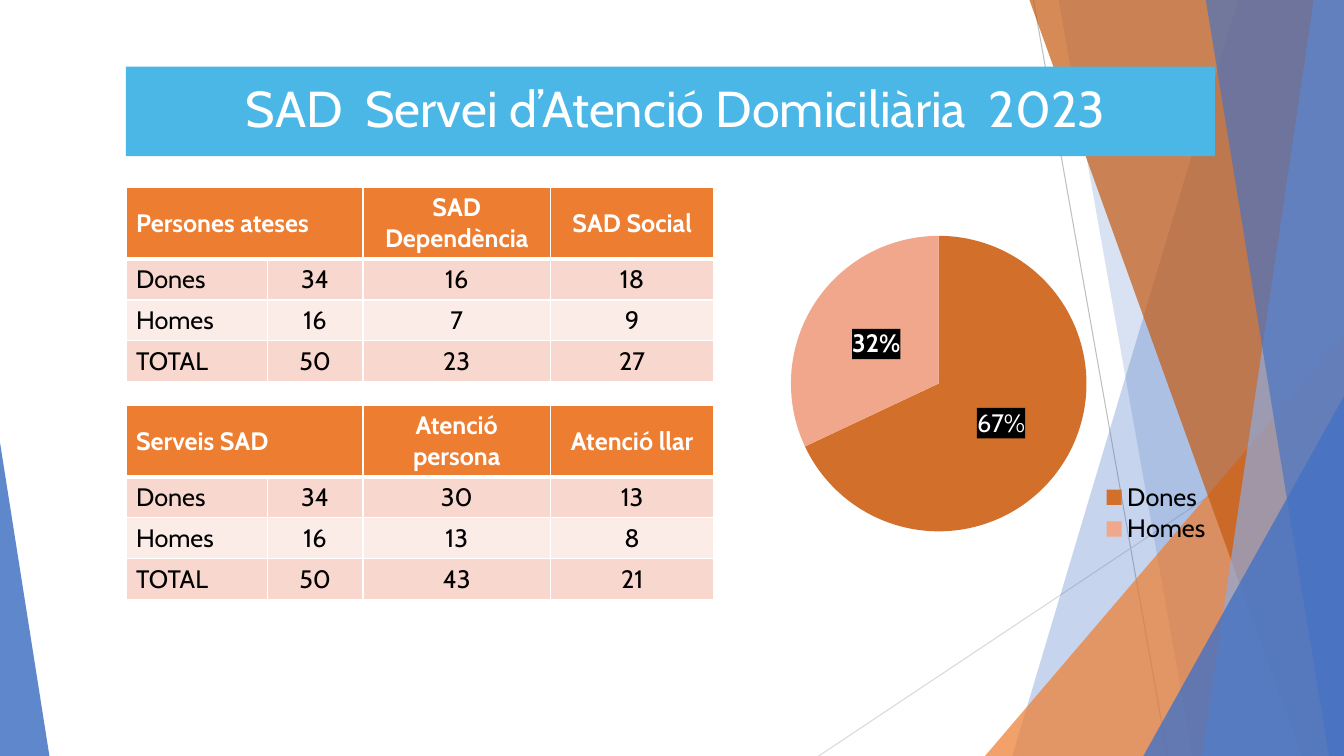
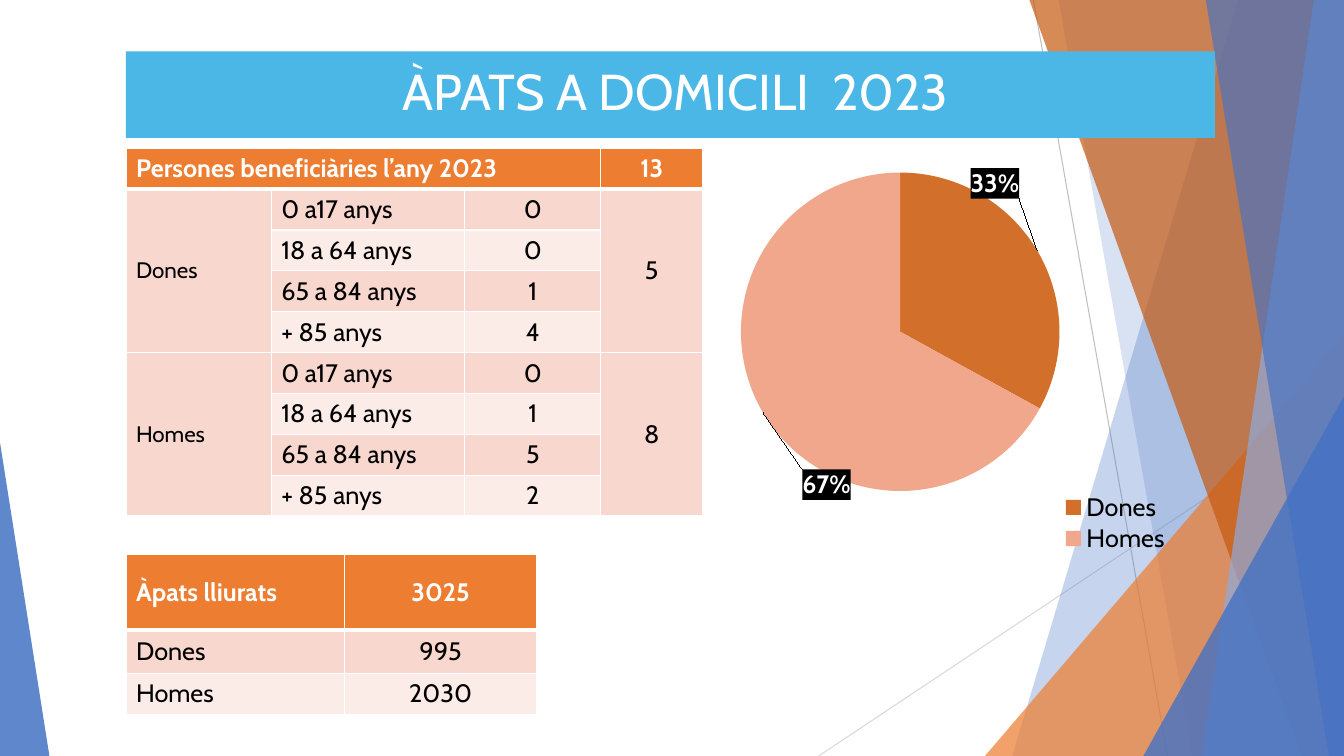
from lxml.etree import SubElement
from pptx import Presentation
from pptx.chart.data import CategoryChartData
from pptx.dml.color import RGBColor
from pptx.enum.chart import XL_CHART_TYPE, XL_LABEL_POSITION, XL_LEGEND_POSITION
from pptx.enum.shapes import MSO_CONNECTOR, MSO_SHAPE
from pptx.enum.text import MSO_ANCHOR, PP_ALIGN
from pptx.oxml import parse_xml
from pptx.oxml.ns import nsdecls, qn
from pptx.util import Inches, Pt

# Grid: one column or row is one inch
COLUMNS, ROWS = 13.33, 7.5
LEFT, BAND_WIDTH = 1.25, 10.8
FONT = "Cabin"
COLORS = {
    "band": "4BB7E7", "header": "ED7D31", "odd": "F8D7CE", "even": "FCECE8",
    "women": "D26F2B", "men": "F1A78B", "blue": "4472C4", "light_blue": "8FAADC",
    "orange": "ED7D31", "brown": "C55A11", "gray": "BFBFBF", "light_gray": "D9D9D9",
    "white": "FFFFFF", "black": "000000",
}


def color(name):
    return RGBColor.from_string(COLORS[name])


def grid(*lengths):
    return [Inches(length) for length in lengths]


def set_font(font, size, color_name, bold=False):
    font.name, font.size, font.bold = FONT, Pt(size), bold
    font.color.rgb = color(color_name)


def paint(shape, color_name, opacity=100):
    shape.shadow.inherit = False
    shape.line.fill.background()
    shape.fill.solid()
    shape.fill.fore_color.rgb = color(color_name)
    if opacity < 100:
        solid = shape.element.spPr.find(qn("a:solidFill"))
        SubElement(solid[0], qn("a:alpha")).set("val", str(opacity * 1000))


# Shared background
def add_ray(shapes, start, end, color_name):
    ray = shapes.add_connector(MSO_CONNECTOR.STRAIGHT, *grid(*start, *end))
    ray.line.color.rgb = color(color_name)
    ray.line.width = Pt(0.75)
    SubElement(ray.element.spPr, qn("a:effectLst"))


def add_strip(shapes, top_x, bottom_x, color_name, opacity):
    """Fill from a slanted edge to the right side of the slide."""
    builder = shapes.build_freeform(*grid(top_x, 0))
    corners = [(COLUMNS, 0), (COLUMNS, ROWS), (bottom_x, ROWS)]
    builder.add_line_segments([grid(*corner) for corner in corners])
    paint(builder.convert_to_shape(), color_name, opacity)


def add_corner(shapes, left, top, width, apex, color_name, opacity):
    """Triangle standing on the lower edge of the slide."""
    triangle = shapes.add_shape(MSO_SHAPE.ISOSCELES_TRIANGLE,
                                *grid(left, top, width, ROWS - top))
    triangle.adjustments[0] = apex
    paint(triangle, color_name, opacity)


def add_background(slide):
    """Draw the facets as one group and move it to the slide's layout."""
    group = slide.shapes.add_group_shape()
    shapes = group.shapes
    add_ray(shapes, (10.25, 0), (11.58, ROWS), "gray")
    add_ray(shapes, (COLUMNS, 4.03), (8.12, ROWS), "light_gray")
    add_strip(shapes, 12.28, 10.04, "blue", 30)
    add_strip(shapes, 10.5, 11.83, "blue", 20)
    add_corner(shapes, 9.77, 3.33, 3.56, 1, "orange", 72)
    add_strip(shapes, 10.21, 12.91, "brown", 70)
    add_strip(shapes, 13.03, 11.92, "light_blue", 70)
    add_strip(shapes, 11.96, 13.18, "blue", 65)
    add_corner(shapes, 11.34, 3.93, 1.99, 1, "blue", 80)
    add_corner(shapes, 0, 4.39, 0.49, 0, "blue", 85)
    slide.slide_layout.shapes.element.append(group.element)


# Title band
def add_title(slide, text, top, height):
    band = slide.shapes.add_shape(MSO_SHAPE.RECTANGLE,
                                  *grid(LEFT, top, BAND_WIDTH, height))
    paint(band, "band")
    frame = band.text_frame
    frame.word_wrap = True
    frame.margin_left = Inches(0.2)
    frame.vertical_anchor = MSO_ANCHOR.MIDDLE
    paragraph = frame.paragraphs[0]
    paragraph.text = text
    paragraph.alignment = PP_ALIGN.CENTER
    paragraph.line_spacing = 0.9
    set_font(paragraph.font, 36, "white")


# Tables
def add_borders(cell, is_header):
    properties = cell._tc.get_or_add_tcPr()
    for index, side in enumerate(("lnL", "lnR", "lnT", "lnB")):
        width = 3 if is_header and side == "lnB" else 1
        properties.insert(index, parse_xml(
            f'<a:{side} {nsdecls("a")} w="{Pt(width)}"><a:solidFill>'
            f'<a:srgbClr val="{COLORS["white"]}"/></a:solidFill></a:{side}>'))


def add_data_table(slide, left, top, widths, heights, rows, spans=()):
    """spans lists (row, column, last row, last column) of merged cells."""
    frame = slide.shapes.add_table(len(heights), len(widths),
                                   *grid(left, top, sum(widths), sum(heights)))
    table = frame.table
    for column, width in zip(table.columns, widths):
        column.width = Inches(width)
    for row, height in zip(table.rows, heights):
        row.height = Inches(height)
    for first_row, first_column, last_row, last_column in spans:
        table.cell(first_row, first_column).merge(table.cell(last_row, last_column))

    for row_index, texts in enumerate(rows):
        is_header = row_index == 0
        fill = "header" if is_header else "odd" if row_index % 2 else "even"
        for column_index, text in enumerate(texts):
            cell = table.cell(row_index, column_index)
            cell.fill.solid()
            cell.fill.fore_color.rgb = color(fill)
            add_borders(cell, is_header)
            cell.vertical_anchor = MSO_ANCHOR.MIDDLE
            is_centered = text.isdigit() or (is_header and column_index > 0)
            is_group_label = (cell.is_merge_origin and cell.span_height > 1
                              and not text.isdigit())
            paragraph = cell.text_frame.paragraphs[0]
            paragraph.text = text
            paragraph.alignment = PP_ALIGN.CENTER if is_centered else PP_ALIGN.LEFT
            set_font(paragraph.font, 16 if is_group_label else 18,
                     "white" if is_header else "black", is_header)


# Pie chart
def set_layout(parent, index, modes=(), **shares):
    """Place a chart part by shares of the chart's size."""
    for old in parent.findall(qn("c:layout")):
        parent.remove(old)
    layout = parse_xml(f'<c:layout {nsdecls("c")}><c:manualLayout/></c:layout>')
    for tag, value in (*modes, *shares.items()):
        SubElement(layout[0], qn(f"c:{tag}")).set("val", str(value))
    parent.insert(index, layout)


def add_pie(slide, box, values, plot, legend_at, custom_text=None, label_shifts=()):
    data = CategoryChartData()
    data.categories = ["Dones", "Homes"]
    data.add_series("Series 1", values)
    chart = slide.shapes.add_chart(XL_CHART_TYPE.PIE, *grid(*box), data).chart
    chart.has_title = False
    set_font(chart.font, 18, "black")
    chart.has_legend = True
    chart.legend.position = XL_LEGEND_POSITION.RIGHT
    chart.legend.include_in_layout = False
    set_font(chart.legend.font, 18, "black")

    edges = (("xMode", "edge"), ("yMode", "edge"))
    set_layout(next(chart.element.iter(qn("c:plotArea"))), 0,
               (("layoutTarget", "inner"), *edges), **dict(zip("xywh", plot)))
    set_layout(next(chart.element.iter(qn("c:legend"))), 1,
               edges, **dict(zip("xywh", (*legend_at, 0.2, 0.15))))

    pie = chart.plots[0]
    pie.vary_by_categories = True
    for index, name in enumerate(("women", "men")):
        point = pie.series[0].points[index]
        point.format.fill.solid()
        point.format.fill.fore_color.rgb = color(name)
        point.format.line.fill.background()
        label = point.data_label
        if custom_text and index == 0:
            paragraph = label.text_frame.paragraphs[0]
            run = paragraph.add_run()
            run.text = custom_text
            set_font(run.font, 18, "white")
        else:
            set_font(label.font, 18, "white", True)
        label.position = XL_LABEL_POSITION.CENTER

    # Percentages on black
    for index, label in enumerate(chart.element.iter(qn("c:dLbl"))):
        label.find(qn("c:showVal")).set("val", "0")
        label.find(qn("c:showPercent")).set("val", "1")
        following = label.find(qn("c:txPr"))
        if following is None:
            following = label.find(qn("c:dLblPos"))
        following.addprevious(parse_xml(
            f'<c:spPr {nsdecls("c", "a")}><a:solidFill>'
            f'<a:srgbClr val="{COLORS["black"]}"/></a:solidFill></c:spPr>'))
        if label_shifts:
            set_layout(label, 1, **dict(zip("xy", label_shifts[index])))


# Slides
def build_home_care(slide):
    add_title(slide, "SAD  Servei d’Atenció Domiciliària  2023", 0.66, 0.89)
    tables = [
        [("Persones ateses", "", "SAD Dependència", "SAD Social"),
         ("Dones", "34", "16", "18"),
         ("Homes", "16", "7", "9"),
         ("TOTAL", "50", "23", "27")],
        [("Serveis SAD", "", "Atenció persona", "Atenció llar"),
         ("Dones", "34", "30", "13"),
         ("Homes", "16", "13", "8"),
         ("TOTAL", "50", "43", "21")],
    ]
    for index, rows in enumerate(tables):
        add_data_table(slide, LEFT, 1.86 + 2.16 * index, [1.4, 0.95, 1.86, 1.62],
                       [0.65] + [0.4] * 3, rows, [(0, 0, 0, 1)])
    add_pie(slide, (6.65, 1.26, 5.43, 4.28), (68, 32),
            (0.22, 0.24, 0.54, 0.71), (0.79, 0.82), custom_text="67%")


def build_meals(slide):
    add_title(slide, "ÀPATS A DOMICILI  2023", 0.51, 0.86)
    add_data_table(slide, LEFT, 5.5, [2.17, 1.9], [0.75, 0.43, 0.4],
                   [("Àpats lliurats", "3025"), ("Dones", "995"), ("Homes", "2030")])
    add_pie(slide, (6.52, 1.04, 5.18, 4.46), (33, 67),
            (0.16, 0.15, 0.61, 0.71), (0.79, 0.86),
            label_shifts=[(0.05, -0.24), (-0.01, 0.25)])

    ages = ["0 a17 anys", "18 a 64 anys", "65 a 84 anys", "+ 85 anys"]
    groups = [("Dones", "0014", "5"), ("Homes", "0152", "8")]
    rows = [("Persones beneficiàries l’any 2023", "", "", "13")]
    spans = [(0, 0, 0, 2)]
    for name, counts, total in groups:
        first = len(rows)
        last = first + len(ages) - 1
        spans += [(first, column, last, column) for column in (0, 3)]
        for index, (age, count) in enumerate(zip(ages, counts)):
            rows.append(("" if index else name, age, count, "" if index else total))
    add_data_table(slide, LEFT, 1.47, [1.44, 1.92, 1.35, 1.01],
                   [0.4] * len(rows), rows, spans)


def main():
    presentation = Presentation()
    presentation.slide_width, presentation.slide_height = grid(COLUMNS, ROWS)
    blank = presentation.slide_layouts[6]
    for index, build in enumerate((build_home_care, build_meals)):
        slide = presentation.slides.add_slide(blank)
        if index == 0:
            add_background(slide)
        build(slide)
    presentation.save("out.pptx")


if __name__ == "__main__":
    main()
